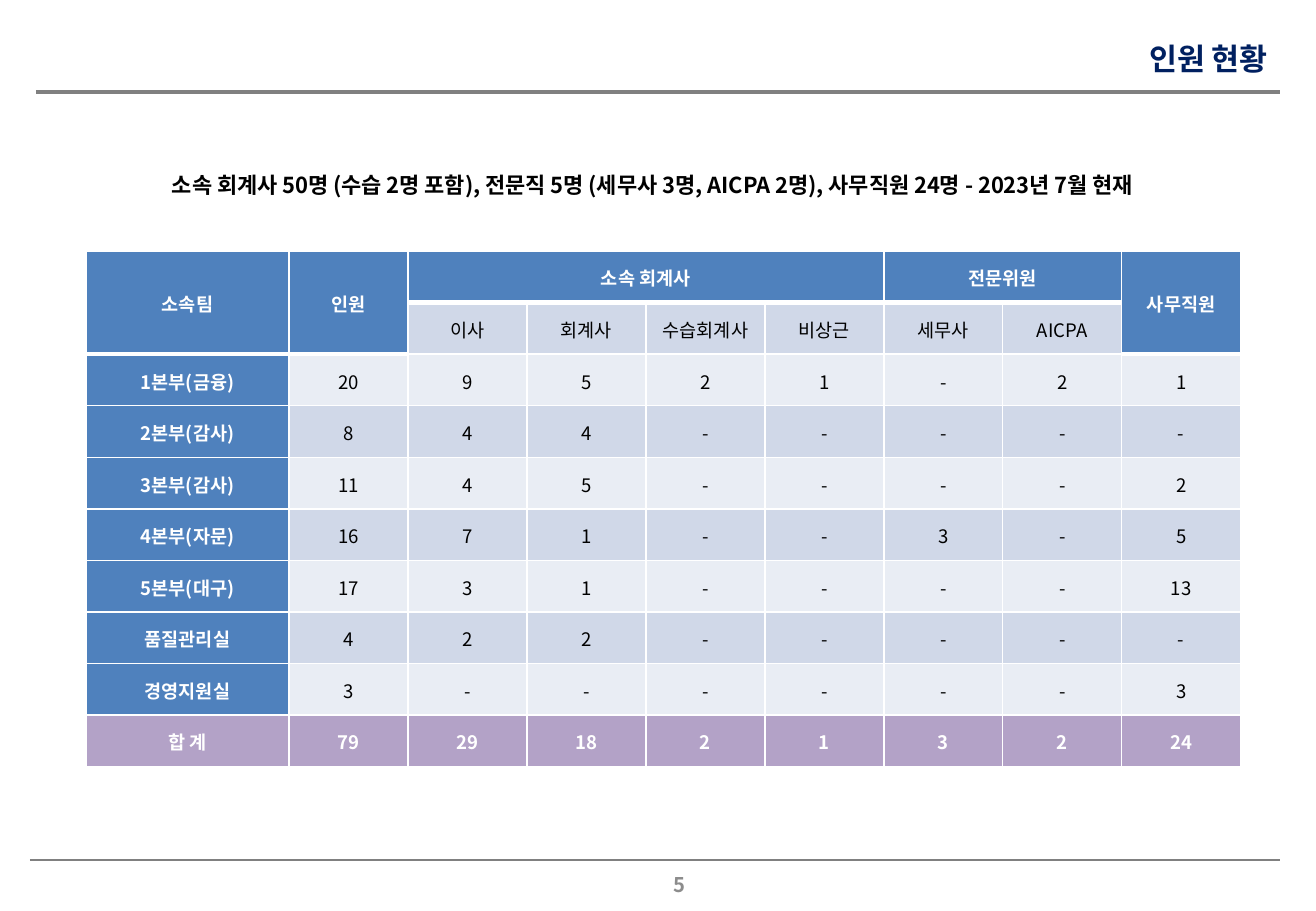
import lxml.etree
import pptx
import pptx.dml.color
import pptx.enum.shapes
import pptx.enum.text
import pptx.oxml.ns
import pptx.util

EMU_PER_PX = 914400 / 121.5
KOREAN = "Noto Sans CJK KR"
ALIGN = pptx.enum.text.PP_ALIGN
ANCHOR = pptx.enum.text.MSO_ANCHOR
GROW = pptx.enum.text.MSO_AUTO_SIZE.SHAPE_TO_FIT_TEXT
BLUE, PURPLE, PALE, MIST = "4F81BD", "B3A2C7", "E9EDF4", "D0D8E8"
WHITE, BLACK, GRAY = "FFFFFF", "000000", "808080"

SUMMARY = "소속 회계사 50명 (수습 2명 포함), 전문직 5명 (세무사 3명, AICPA 2명), 사무직원 24명 - 2023년 7월 현재"
COLUMN_WIDTHS = [203] + [119] * 8
STAFF = [
    ["소속팀", "인원", "소속 회계사", "", "", "", "전문위원", "", "사무직원"],
    ["", "", "이사", "회계사", "수습회계사", "비상근", "세무사", "AICPA", ""],
    ["1본부(금융)", "20", "9", "5", "2", "1", "-", "2", "1"],
    ["2본부(감사)", "8", "4", "4", "-", "-", "-", "-", "-"],
    ["3본부(감사)", "11", "4", "5", "-", "-", "-", "-", "2"],
    ["4본부(자문)", "16", "7", "1", "-", "-", "3", "-", "5"],
    ["5본부(대구)", "17", "3", "1", "-", "-", "-", "-", "13"],
    ["품질관리실", "4", "2", "2", "-", "-", "-", "-", "-"],
    ["경영지원실", "3", "-", "-", "-", "-", "-", "-", "3"],
    ["합 계", "79", "29", "18", "2", "1", "3", "2", "24"],
]
MERGES = [(0, 0, 1, 0), (0, 1, 1, 1), (0, 2, 0, 5), (0, 6, 0, 7), (0, 8, 1, 8)]


def px(length):
    """Turn pixels into EMU."""
    return pptx.util.Emu(round(length * EMU_PER_PX))


def color(value):
    """Turn a hex string into a colour."""
    return pptx.dml.color.RGBColor.from_string(value)


def write(frame, text, size, ink, bold=True, align=ALIGN.CENTER, latin=KOREAN):
    """Fill a text frame with one formatted paragraph and return it."""
    frame.word_wrap = True
    para = frame.paragraphs[0]
    para.text = text
    para.alignment = align
    font = para.font
    font.size = pptx.util.Pt(size)
    font.bold = bold
    font.color.rgb = color(ink)
    font.name = latin
    defaults = para._p.pPr.find(pptx.oxml.ns.qn("a:defRPr"))
    lxml.etree.SubElement(defaults, pptx.oxml.ns.qn("a:ea"), typeface=KOREAN)
    return para


def add_rule(page, left, right, y, weight):
    """Draw a horizontal gray line."""
    rule = page.shapes.add_connector(
        pptx.enum.shapes.MSO_CONNECTOR.STRAIGHT, px(left), px(y), px(right), px(y))
    rule.line.color.rgb = color(GRAY)
    rule.line.width = pptx.util.Pt(weight)
    lxml.etree.SubElement(rule._element.spPr, pptx.oxml.ns.qn("a:effectLst"))


def add_header(page, left, top, width, height):
    """Place the title above its rule."""
    add_rule(page, left, left + width, top + height, 2.25)
    title = page.shapes.title
    title.left, title.top = px(left + width - 354), px(top)
    title.width, title.height = px(354), px(49)
    title.text_frame.vertical_anchor = ANCHOR.TOP
    title.text_frame.auto_size = GROW
    write(title.text_frame, "인원 현황", 18, "002060", align=ALIGN.RIGHT, latin="Arial")


def add_summary(page, left, top, width, height):
    """Place the headcount sentence."""
    box = page.shapes.add_textbox(px(left), px(top), px(width), px(height))
    box.text_frame.auto_size = GROW
    write(box.text_frame, SUMMARY, 13, BLACK).line_spacing = 1.5


def add_footer(page, left, top, width, height):
    """Place the page number below its rule."""
    add_rule(page, left, left + width, top, 1.5)
    box = page.shapes.add_textbox(px(left + 441), px(top), px(417), px(height))
    box.text_frame.vertical_anchor = ANCHOR.MIDDLE
    write(box.text_frame, "5", 12, "8C8C8C")


def cell_look(row, column):
    """Return the fill, text colour and boldness of a table cell."""
    if row == len(STAFF) - 1:
        return PURPLE, WHITE, True
    if row == 0 or column == 0 or (row == 1 and column in (1, 8)):
        return BLUE, WHITE, True
    return (MIST if row % 2 else PALE), BLACK, False


def add_borders(cell, row, column):
    """Edge a cell in white, thicker below the blue header."""
    header_end = 1 if 2 <= column <= 7 else 2
    weights = {"L": 1, "R": 1, "T": 3 if row == header_end else 1,
               "B": 3 if row == 0 or row + 1 == header_end else 1}
    properties = cell._tc.get_or_add_tcPr()
    for side, weight in weights.items():
        edge = lxml.etree.SubElement(
            properties, pptx.oxml.ns.qn("a:ln" + side), w=str(pptx.util.Pt(weight)))
        fill = lxml.etree.SubElement(edge, pptx.oxml.ns.qn("a:solidFill"))
        lxml.etree.SubElement(fill, pptx.oxml.ns.qn("a:srgbClr"), val=WHITE)


def add_staff_table(page, left, top, width, height):
    """Place the table of staff by team."""
    table = page.shapes.add_table(len(STAFF), len(COLUMN_WIDTHS), px(left), px(top),
                                  px(width), px(height)).table
    table.first_row = table.horz_banding = False
    for column, column_width in zip(table.columns, COLUMN_WIDTHS):
        column.width = px(column_width)
    for row in table.rows:
        row.height = px(height / len(STAFF))
    for first_row, first_column, last_row, last_column in MERGES:
        table.cell(first_row, first_column).merge(table.cell(last_row, last_column))
    for row, texts in enumerate(STAFF):
        for column, text in enumerate(texts):
            cell = table.cell(row, column)
            fill, ink, bold = cell_look(row, column)
            add_borders(cell, row, column)
            cell.fill.solid()
            cell.fill.fore_color.rgb = color(fill)
            cell.vertical_anchor = ANCHOR.MIDDLE
            cell.margin_left = cell.margin_right = px(9)
            cell.margin_top = cell.margin_bottom = 0
            if text:
                para = write(cell.text_frame, text, 11, ink, bold)
                para.line_spacing = 1.07
                para.space_after = pptx.util.Pt(8)


def main():
    """Build the deck with its staffing page."""
    deck = pptx.Presentation()
    deck.slide_width, deck.slide_height = px(1316), px(911)
    page = deck.slides.add_slide(deck.slide_layouts[5])
    add_header(page, 36, 34, 1244, 58)
    add_footer(page, 30, 860, 1250, 49)
    add_summary(page, 64, 152, 1177, 47)
    add_staff_table(page, 86, 251, sum(COLUMN_WIDTHS), 516)
    deck.save("out.pptx")


if __name__ == "__main__":
    main()
